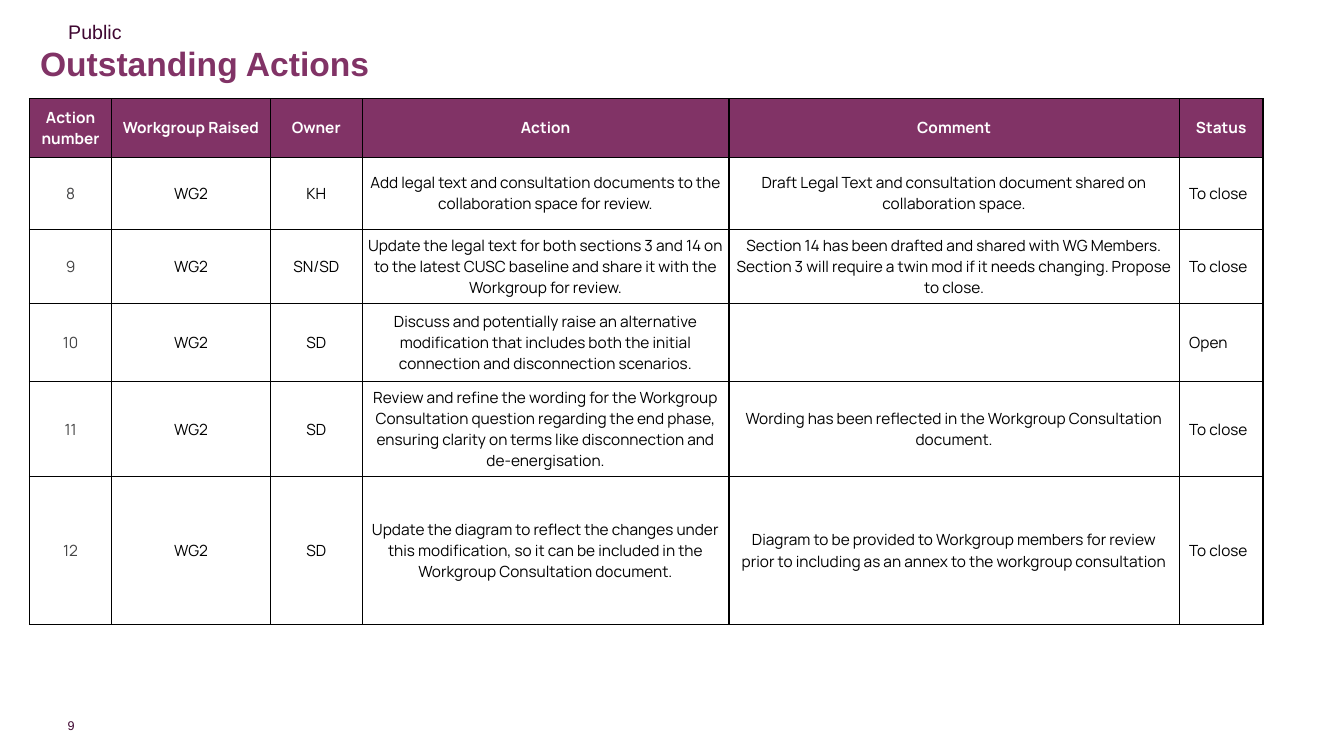
from dataclasses import dataclass

from lxml import etree
from pptx import Presentation
from pptx.dml.color import RGBColor
from pptx.enum.text import MSO_ANCHOR, PP_ALIGN
from pptx.oxml.ns import qn
from pptx.util import Cm, Pt

MIDDLE, TOP = MSO_ANCHOR.MIDDLE, MSO_ANCHOR.TOP
LEFT, CENTER, RIGHT = PP_ALIGN.LEFT, PP_ALIGN.CENTER, PP_ALIGN.RIGHT


@dataclass(frozen=True)
class Theme:
    """Colours, fonts and type sizes of the slide."""
    plum: str = "813366"
    dark: str = "3F0731"
    grey: str = "454546"
    black: str = "000000"
    white: str = "FFFFFF"
    font: str = "Arial"
    table_font: str = "Manrope"
    title: int = 24
    label: int = 14
    body: int = 11
    number: int = 9


THEME = Theme()
COLUMN_WIDTHS = (2.08, 3.99, 2.32, 9.24, 11.35, 2.11)
ROW_HEIGHTS = (1.47, 1.83, 1.86, 1.97, 2.39, 3.73)
HEADERS = ("Action number", "Workgroup Raised", "Owner", "Action", "Comment", "Status")
ACTIONS = (
    ("8", "WG2", "KH",
     "Add legal text and consultation documents to the collaboration space for review.",
     "Draft Legal Text and consultation document shared on collaboration space.",
     "To close"),
    ("9", "WG2", "SN/SD",
     "Update the legal text for both sections 3 and 14 on to the latest CUSC baseline "
     "and share it with the Workgroup for review.",
     "Section 14 has been drafted and shared with WG Members. Section 3 will require "
     "a twin mod if it needs changing. Propose to close.",
     "To close"),
    ("10", "WG2", "SD",
     "Discuss and potentially raise an alternative modification that includes both "
     "the initial connection and disconnection scenarios.",
     "",
     "Open"),
    ("11", "WG2", "SD",
     "Review and refine the wording for the Workgroup Consultation question regarding "
     "the end phase, ensuring clarity on terms like disconnection and de-energisation.",
     "Wording has been reflected in the Workgroup Consultation document.",
     "To close"),
    ("12", "WG2", "SD",
     "Update the diagram to reflect the changes under this modification, so it can be "
     "included in the Workgroup Consultation document.",
     "Diagram to be provided to Workgroup members for review prior to including as an "
     "annex to the workgroup consultation",
     "To close"),
)


def add_run(p, text, font, size, color, bold=False):
    """Add one formatted run to a paragraph."""
    r = p.add_run()
    r.text = text
    r.font.name = font
    r.font.size = Pt(size)
    r.font.bold = bold
    r.font.color.rgb = RGBColor.from_string(color)


def add_text(s, box, text, size, color, bold=False, align=LEFT, anchor=TOP, inset=(0.25, 0.13)):
    """Add a one-line text box and return its paragraph."""
    tf = s.shapes.add_textbox(*map(Cm, box)).text_frame
    tf.word_wrap = True
    tf.vertical_anchor = anchor
    tf.margin_left = tf.margin_right = Cm(inset[0])
    tf.margin_top = tf.margin_bottom = Cm(inset[1])
    p = tf.paragraphs[0]
    p.alignment = align
    add_run(p, text, THEME.font, size, color, bold)
    return p


def set_borders(cell):
    """Draw a thin black line on all four sides of a cell."""
    tc_pr = cell._tc.get_or_add_tcPr()
    for i, side in enumerate(("a:lnL", "a:lnR", "a:lnT", "a:lnB")):
        ln = etree.Element(qn(side), w=str(Pt(1)))
        fill = etree.SubElement(ln, qn("a:solidFill"))
        etree.SubElement(fill, qn("a:srgbClr"), val=THEME.black)
        tc_pr.insert(i, ln)


def fill_cell(cell, text, header, column):
    """Format one table cell and write its text."""
    status = column == len(HEADERS) - 1 and not header
    cell.vertical_anchor = MIDDLE
    cell.margin_left = cell.margin_right = Cm(0.25 if status else 0.13)
    cell.margin_top = cell.margin_bottom = Cm(0.13)
    if header:
        cell.fill.solid()
        cell.fill.fore_color.rgb = RGBColor.from_string(THEME.plum)
        color = THEME.white
    else:
        cell.fill.background()
        color = THEME.black if column else THEME.grey
    set_borders(cell)
    p = cell.text_frame.paragraphs[0]
    p.alignment = LEFT if status else CENTER
    if text:
        add_run(p, text, THEME.table_font, THEME.body, color, header)


def add_action_table(s):
    """Add the table of actions with its header row."""
    rows = (HEADERS, *ACTIONS)
    table = s.shapes.add_table(len(rows), len(HEADERS), Cm(0.74), Cm(2.49),
                               Cm(sum(COLUMN_WIDTHS)), Cm(sum(ROW_HEIGHTS))).table
    table.horz_banding = False
    for column, width in zip(table.columns, COLUMN_WIDTHS):
        column.width = Cm(width)
    for row, height in zip(table.rows, ROW_HEIGHTS):
        row.height = Cm(height)
    for i, texts in enumerate(rows):
        for j, text in enumerate(texts):
            fill_cell(table.cell(i, j), text, i == 0, j)


def main():
    """Build the slide and save it."""
    prs = Presentation()
    prs.slide_width, prs.slide_height = Cm(33.87), Cm(19.05)
    s = prs.slides.add_slide(prs.slide_layouts[6])
    add_text(s, (1.5, 18.08, 0.38, 0.38), "9", THEME.number, THEME.dark,
             align=RIGHT, anchor=MIDDLE, inset=(0, 0))
    add_text(s, (1.47, 0.38, 12.7, 0.86), "Public", THEME.label, THEME.dark)
    title = add_text(s, (0.76, 0.51, 26.6, 2.29), "Outstanding Actions",
                     THEME.title, THEME.plum, bold=True, anchor=MIDDLE)
    title.line_spacing = 0.9
    add_action_table(s)
    prs.save("out.pptx")


if __name__ == "__main__":
    main()
